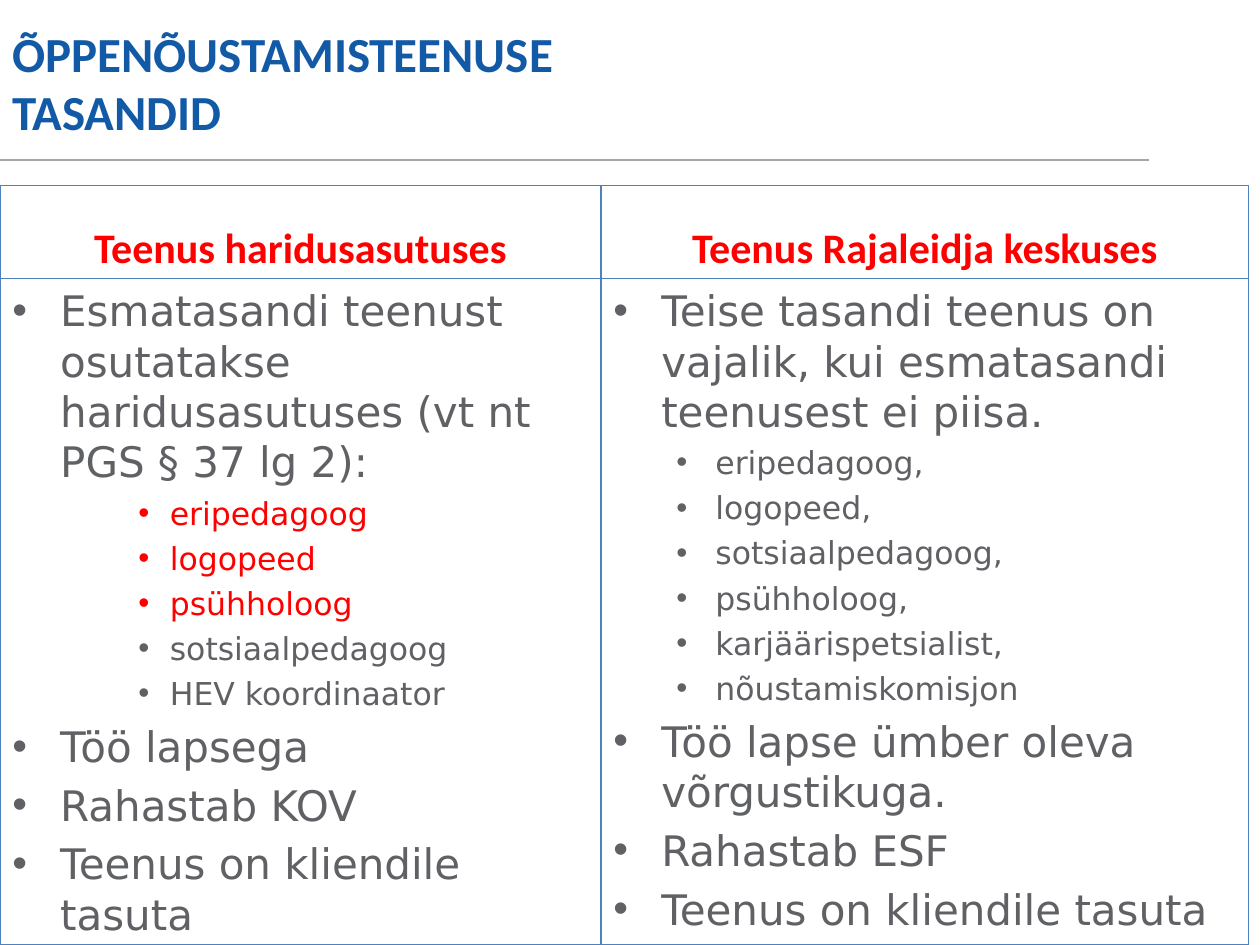
"""Builds the slide comparing the two levels of study counselling."""
from lxml import etree
from pptx import Presentation
from pptx.dml.color import RGBColor
from pptx.enum.shapes import MSO_CONNECTOR, MSO_SHAPE
from pptx.enum.text import MSO_ANCHOR, PP_ALIGN
from pptx.oxml.ns import qn
from pptx.util import Inches, Pt

STRAIGHT = MSO_CONNECTOR.STRAIGHT
RECTANGLE = MSO_SHAPE.RECTANGLE
TOP, MIDDLE, BOTTOM = MSO_ANCHOR.TOP, MSO_ANCHOR.MIDDLE, MSO_ANCHOR.BOTTOM
LEFT, CENTER = PP_ALIGN.LEFT, PP_ALIGN.CENTER

BLUE = RGBColor(0x13, 0x5A, 0xA6)
BORDER = RGBColor(0x4F, 0x81, 0xBD)
RULE = RGBColor(0xA6, 0xA6, 0xA6)
RED = RGBColor(0xFF, 0x00, 0x00)
GRAY = RGBColor(0x60, 0x61, 0x64)

TITLE = {"name": "Calibri", "size": Pt(28), "bold": True}
HEADER = {"name": "Calibri", "size": Pt(24), "bold": True}
MAIN = {"name": "DejaVu Sans", "size": Pt(24)}
SUB = {"name": "DejaVu Sans", "size": Pt(18)}

HEADER_TOP, BODY_TOP, BODY_BOTTOM = 1.47, 2.21, 7.5

COLUMNS = [
    (0, 4.77, "Teenus haridusasutuses", 2, 1.25, 0.25, [
        ("Esmatasandi teenust osutatakse haridusasutuses (vt nt PGS § 37 lg 2):", MAIN, GRAY),
        ("eripedagoog", SUB, RED),
        ("logopeed", SUB, RED),
        ("psühholoog", SUB, RED),
        ("sotsiaalpedagoog", SUB, GRAY),
        ("HEV koordinaator", SUB, GRAY),
        ("Töö lapsega", MAIN, GRAY),
        ("Rahastab KOV", MAIN, GRAY),
        ("Teenus on kliendile tasuta", MAIN, GRAY),
    ]),
    (4.77, 5.14, "Teenus Rajaleidja keskuses", 1, 0.81, 0.31, [
        ("Teise tasandi teenus on vajalik, kui esmatasandi teenusest ei piisa.", MAIN, GRAY),
        ("eripedagoog,", SUB, GRAY),
        ("logopeed,", SUB, GRAY),
        ("sotsiaalpedagoog,", SUB, GRAY),
        ("psühholoog,", SUB, GRAY),
        ("karjäärispetsialist,", SUB, GRAY),
        ("nõustamiskomisjon", SUB, GRAY),
        ("Töö lapse ümber oleva võrgustikuga.", MAIN, GRAY),
        ("Rahastab ESF", MAIN, GRAY),
        ("Teenus on kliendile tasuta", MAIN, GRAY),
    ]),
]


def write(p, text, style, color, align=LEFT):
    p.text = text
    p.alignment = align
    for r in p.runs:
        for key, value in style.items():
            setattr(r.font, key, value)
        r.font.color.rgb = color


def add_cell(x, y, w, h, anchor):
    sp = s.shapes.add_shape(RECTANGLE, Inches(x), Inches(y), Inches(w), Inches(h))
    sp.shadow.inherit = False
    sp.fill.background()
    sp.line.color.rgb = BORDER
    sp.line.width = Pt(0.75)
    tf = sp.text_frame
    tf.word_wrap = True
    tf.vertical_anchor = anchor
    return tf


prs = Presentation()
prs.slide_width = Inches(10)
prs.slide_height = Inches(7.5)
s = prs.slides.add_slide(prs.slide_layouts[6])

rule = s.shapes.add_connector(STRAIGHT, Inches(-0.2), Inches(1.27), Inches(9.12), Inches(1.27))
rule.line.color.rgb = RULE
rule.line.width = Pt(1)
etree.SubElement(rule._element.spPr, qn("a:effectLst"))

title = s.shapes.add_textbox(0, 0, Inches(8.45), Inches(1.3))
title.text_frame.word_wrap = True
title.text_frame.vertical_anchor = MIDDLE
write(title.text_frame.paragraphs[0], "ÕPPENÕUSTAMISTEENUSE\vTASANDID", TITLE, BLUE)

for x, w, heading, sub_level, sub_margin, sub_hang, items in COLUMNS:
    tf = add_cell(x, HEADER_TOP, w, BODY_TOP - HEADER_TOP, BOTTOM)
    write(tf.paragraphs[0], heading, HEADER, RED, CENTER)

    tf = add_cell(x, BODY_TOP, w, BODY_BOTTOM - BODY_TOP, TOP)
    for i, (text, style, color) in enumerate(items):
        p = tf.add_paragraph() if i else tf.paragraphs[0]
        write(p, text, style, color)
        level, margin, hang = (sub_level, sub_margin, sub_hang) if style is SUB else (0, 0.38, 0.38)
        p.level = level
        if i:
            p.space_before = Pt(4.2 if style is SUB else 4.8)
        pPr = p._p.get_or_add_pPr()
        pPr.set("marL", str(Inches(margin)))
        pPr.set("indent", str(-Inches(hang)))
        etree.SubElement(pPr, qn("a:buFont")).set("typeface", "Arial")
        etree.SubElement(pPr, qn("a:buChar")).set("char", "•")

prs.save("out.pptx")
